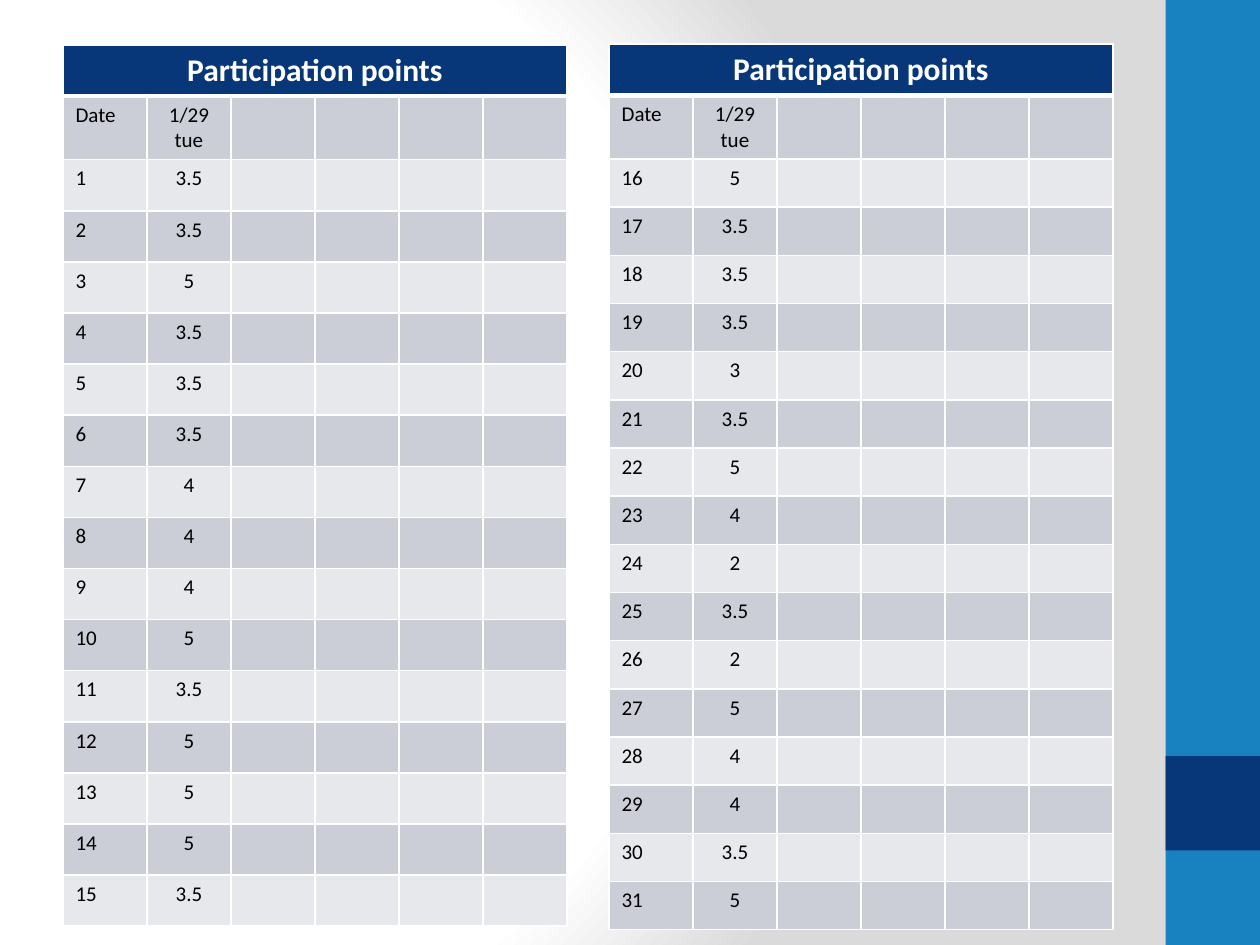
from lxml import etree
from pptx import Presentation
from pptx.dml.color import RGBColor
from pptx.enum.shapes import MSO_SHAPE
from pptx.enum.text import PP_ALIGN
from pptx.oxml import parse_xml
from pptx.oxml.ns import nsdecls, qn
from pptx.util import Pt

RECT = MSO_SHAPE.RECTANGLE
LEFT, CENTER = PP_ALIGN.LEFT, PP_ALIGN.CENTER
NAVY, BLUE, WHITE, BLACK = "073779", "1782BF", "FFFFFF", "000000"
BANDS = ["CCCED7", "E7E8EC"]
COLS, COL_W = 6, 48
FIRST = "3.5 3.5 5 3.5 3.5 3.5 4 4 4 5 3.5 5 5 5 3.5".split()
SECOND = "5 3.5 3.5 3.5 3 3.5 5 4 2 3.5 2 5 4 4 3.5 5".split()


def paint(fill, color):
    fill.solid()
    fill.fore_color.rgb = RGBColor.from_string(color)


def add_back(slide):
    stops = "".join(
        f'<a:gs pos="{pos * 1000}"><a:srgbClr val="{color}"/></a:gs>'
        for pos, color in [(0, WHITE), (75, WHITE), (100, "DADADA")])
    slide.background.fill.gradient()
    old = slide.element.find(".//" + qn("a:gradFill"))
    new = parse_xml(
        f'<a:gradFill {nsdecls("a")} rotWithShape="1"><a:gsLst>{stops}</a:gsLst>'
        '<a:path path="circle"><a:fillToRect l="20000" t="50000" '
        'r="100000" b="50000"/></a:path></a:gradFill>')
    old.getparent().replace(old, new)


def add_bar(slide, top, height, color):
    bar = slide.shapes.add_shape(RECT, Pt(666), Pt(top), Pt(54), Pt(height))
    bar.shadow.inherit = False
    paint(bar.fill, color)
    bar.line.fill.background()


def add_edges(cell, base):
    props = cell._tc.get_or_add_tcPr()
    for side in "LRTB":
        width = base if side == "B" else 1
        line = etree.SubElement(props, qn("a:ln" + side), w=str(Pt(width)))
        solid = etree.SubElement(line, qn("a:solidFill"))
        etree.SubElement(solid, qn("a:srgbClr"), val=WHITE)


def style_cell(cell, text, fill, size, color, bold, align, base=1):
    add_edges(cell, base)
    paint(cell.fill, fill)
    cell.text_frame.text = text
    for para in cell.text_frame.paragraphs:
        para.alignment = align
        for run in para.runs:
            font = run.font
            font.name, font.size, font.bold = "Calibri", Pt(size), bold
            font.color.rgb = RGBColor.from_string(color)
        if not para.runs:
            etree.SubElement(para._p, qn("a:endParaRPr"), sz=str(size * 100))


def add_points(slide, left, top, head, height, date, start, scores):
    rows = [("Date", date)]
    rows += [(str(num), score) for num, score in enumerate(scores, start)]
    total = head + height * len(rows)
    table = slide.shapes.add_table(
        len(rows) + 1, COLS, Pt(left), Pt(top), Pt(COLS * COL_W), Pt(total)).table
    table.horz_banding = False
    table.first_row = False
    for col in table.columns:
        col.width = Pt(COL_W)
    for row in table.rows:
        row.height = Pt(height)
    table.rows[0].height = Pt(head)

    for col in range(COLS):
        title = "" if col else "Participation points"
        style_cell(table.cell(0, col), title, NAVY, 18, WHITE, True, CENTER, 3)
    table.cell(0, 0).merge(table.cell(0, COLS - 1))
    for idx, row in enumerate(rows):
        for col in range(COLS):
            text = row[col] if col < len(row) else ""
            align = CENTER if col == 1 else LEFT
            style_cell(table.cell(idx + 1, col), text, BANDS[idx % 2],
                       12, BLACK, False, align)


def main():
    deck = Presentation()
    deck.slide_width, deck.slide_height = Pt(720), Pt(540)
    slide = deck.slides.add_slide(deck.slide_layouts[6])
    add_back(slide)
    add_bar(slide, 0, 540, BLUE)
    add_bar(slide, 432, 54, NAVY)
    add_points(slide, 36, 25.6, 29.2, 29.2, "1/29 tue", 1, FIRST)
    add_points(slide, 348, 25.2, 28.8, 27.55, "1/29\ntue", 16, SECOND)
    deck.save("out.pptx")


if __name__ == "__main__":
    main()
